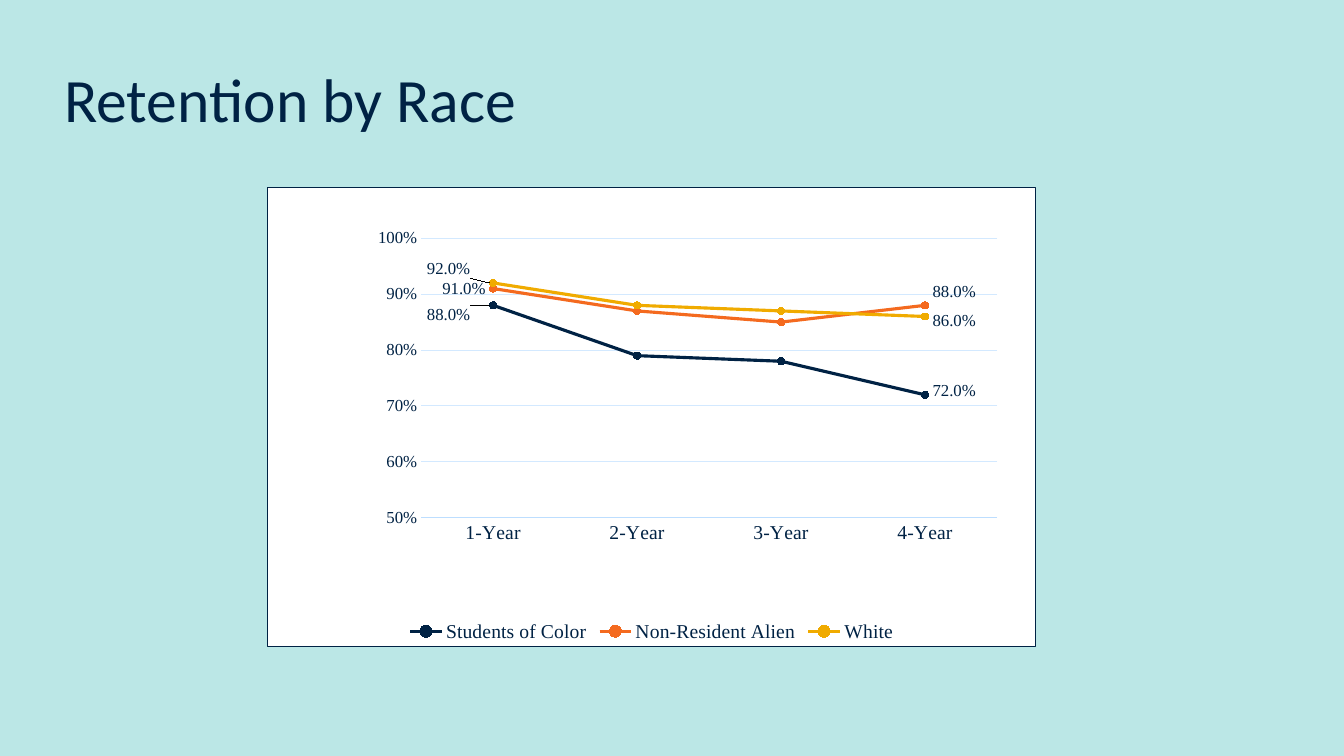
"""Build the slide showing student retention by race as a line chart."""
from dataclasses import dataclass

from lxml import etree
from pptx import Presentation
from pptx.chart.chart import Chart
from pptx.chart.data import CategoryChartData
from pptx.chart.series import LineSeries
from pptx.dml.color import RGBColor
from pptx.enum.chart import (XL_CHART_TYPE, XL_LABEL_POSITION, XL_LEGEND_POSITION,
                             XL_MARKER_STYLE, XL_TICK_MARK)
from pptx.enum.text import MSO_ANCHOR
from pptx.oxml import parse_xml
from pptx.oxml.ns import qn
from pptx.slide import Slide
from pptx.text.text import Font
from pptx.util import Cm, Pt

LINE_MARKERS = XL_CHART_TYPE.LINE_MARKERS
LEFT = XL_LABEL_POSITION.LEFT
RIGHT = XL_LABEL_POSITION.RIGHT
BOTTOM = XL_LEGEND_POSITION.BOTTOM
CIRCLE = XL_MARKER_STYLE.CIRCLE
NO_TICK = XL_TICK_MARK.NONE
MIDDLE = MSO_ANCHOR.MIDDLE

COLORS = {"background": "BBE7E6", "navy": "002244", "orange": "F46A1F",
          "gold": "F0AB00", "white": "FFFFFF", "grid": "D3E9FF", "axis": "BDDEFF"}
TITLE_FONT = "Calibri"
CHART_FONT = "Times New Roman"
YEARS = ("1-Year", "2-Year", "3-Year", "4-Year")
LABEL_FORMAT = "0.0%"
CHART_NAMESPACE = "http://schemas.openxmlformats.org/drawingml/2006/chart"
DRAWING_NAMESPACE = "http://schemas.openxmlformats.org/drawingml/2006/main"


@dataclass(frozen=True)
class PointLabel:
    """Value label of one point, shifted by fractions of the chart."""
    index: int
    position: XL_LABEL_POSITION
    shift_x: float
    shift_y: float


@dataclass(frozen=True)
class RetentionLine:
    """One group of students and its labelled points."""
    name: str
    values: tuple[float, ...]
    color: str
    labels: tuple[PointLabel, ...]


RETENTION_LINES = (
    RetentionLine("Students of Color", (0.88, 0.79, 0.78, 0.72), "navy",
                  (PointLabel(0, LEFT, -0.02, 0.02), PointLabel(3, RIGHT, 0, -0.01))),
    RetentionLine("Non-Resident Alien", (0.91, 0.87, 0.85, 0.88), "orange",
                  (PointLabel(0, LEFT, 0, 0), PointLabel(3, RIGHT, 0, -0.03))),
    RetentionLine("White", (0.92, 0.88, 0.87, 0.86), "gold",
                  (PointLabel(0, LEFT, -0.02, -0.03), PointLabel(3, RIGHT, 0, 0.01))),
)


def color_of(name: str) -> RGBColor:
    """Return a named colour."""
    return RGBColor.from_string(COLORS[name])


def style_font(font: Font, size: float, family: str = CHART_FONT) -> None:
    """Set size, family and the navy text colour."""
    font.size = Pt(size)
    font.name = family
    font.bold = False
    font.color.rgb = color_of("navy")


def make_layout(**settings: str | float) -> etree._Element:
    """Return a manual layout with the given settings in order."""
    layout = parse_xml(f'<c:layout xmlns:c="{CHART_NAMESPACE}"><c:manualLayout/></c:layout>')
    for tag, value in settings.items():
        etree.SubElement(layout[0], qn(f"c:{tag}")).set("val", str(value))
    return layout


def add_title(slide: Slide) -> None:
    """Add the slide title."""
    shape = slide.shapes.add_textbox(Cm(1.37), Cm(0.43), Cm(31.04), Cm(4.29))
    text_frame = shape.text_frame
    text_frame.word_wrap = True
    text_frame.vertical_anchor = MIDDLE
    text_frame.text = "Retention by Race"
    paragraph = text_frame.paragraphs[0]
    paragraph.line_spacing = 0.9
    style_font(paragraph.runs[0].font, 44, TITLE_FONT)


def style_series(series: LineSeries, line: RetentionLine) -> None:
    """Format one line with its markers and point labels."""
    color = color_of(line.color)
    series.smooth = False
    series.format.line.color.rgb = color
    series.format.line.width = Pt(2.25)
    series.marker.style = CIRCLE
    series.marker.size = 5
    series.marker.format.fill.solid()
    series.marker.format.fill.fore_color.rgb = color
    series.marker.format.line.color.rgb = color
    data_labels = series.data_labels
    data_labels.show_value = False
    data_labels.number_format = LABEL_FORMAT
    data_labels.number_format_is_linked = False
    style_font(data_labels.font, 12)
    for label in line.labels:
        data_label = series.points[label.index].data_label
        style_font(data_label.font, 12)
        data_label.position = label.position
    for label, element in zip(line.labels, series._element.iter(qn("c:dLbl"))):
        element.insert(1, make_layout(x=label.shift_x, y=label.shift_y))
        number_format = etree.Element(qn("c:numFmt"))
        number_format.set("formatCode", LABEL_FORMAT)
        number_format.set("sourceLinked", "0")
        element.insert(2, number_format)


def style_axes(chart: Chart) -> None:
    """Format both axes and the gridlines."""
    category_axis, value_axis = chart.category_axis, chart.value_axis
    for axis, size in ((category_axis, 14), (value_axis, 12)):
        axis.major_tick_mark = NO_TICK
        axis.minor_tick_mark = NO_TICK
        style_font(axis.tick_labels.font, size)
    category_axis.format.line.color.rgb = color_of("axis")
    category_axis.format.line.width = Pt(0.75)
    value_axis.format.line.fill.background()
    value_axis.minimum_scale = 0.5
    value_axis.maximum_scale = 1
    value_axis.major_unit = 0.1
    value_axis.tick_labels.number_format = "0%"
    value_axis.tick_labels.number_format_is_linked = False
    gridline = value_axis.major_gridlines.format.line
    gridline.color.rgb = color_of("grid")
    gridline.width = Pt(0.75)


def style_chart_area(chart: Chart) -> None:
    """Give the chart its white area, navy border and plot placement."""
    chart_element = chart._chartSpace.find(qn("c:chart"))
    chart_element.addnext(parse_xml(
        f'<c:spPr xmlns:c="{CHART_NAMESPACE}" xmlns:a="{DRAWING_NAMESPACE}">'
        f'<a:solidFill><a:srgbClr val="{COLORS["white"]}"/></a:solidFill>'
        f'<a:ln w="{Pt(0.75)}"><a:solidFill><a:srgbClr val="{COLORS["navy"]}"/>'
        '</a:solidFill></a:ln></c:spPr>'))
    plot_area = chart_element.find(qn("c:plotArea"))
    for layout in plot_area.findall(qn("c:layout")):
        plot_area.remove(layout)
    plot_area.insert(0, make_layout(layoutTarget="inner", xMode="edge", yMode="edge",
                                    x=0.2, y=0.11, w=0.75, h=0.61))


def add_retention_chart(slide: Slide) -> None:
    """Add the retention line chart."""
    chart_data = CategoryChartData(number_format="0%")
    chart_data.categories = YEARS
    for line in RETENTION_LINES:
        chart_data.add_series(line.name, line.values)
    chart = slide.shapes.add_chart(LINE_MARKERS, Cm(6.73), Cm(4.72), Cm(19.38),
                                   Cm(11.58), chart_data).chart
    style_font(chart.font, 10)
    chart.has_title = False
    chart.has_legend = True
    chart.legend.position = BOTTOM
    chart.legend.include_in_layout = False
    style_font(chart.legend.font, 14)
    chart.plots[0].vary_by_categories = False
    style_axes(chart)
    for series, line in zip(chart.plots[0].series, RETENTION_LINES):
        style_series(series, line)
    style_chart_area(chart)


def main() -> None:
    """Build and save the presentation."""
    presentation = Presentation()
    presentation.slide_width = Cm(33.87)
    presentation.slide_height = Cm(19.05)
    slide = presentation.slides.add_slide(presentation.slide_layouts[6])
    slide.background.fill.solid()
    slide.background.fill.fore_color.rgb = color_of("background")
    add_title(slide)
    add_retention_chart(slide)
    presentation.save("out.pptx")


if __name__ == "__main__":
    main()
